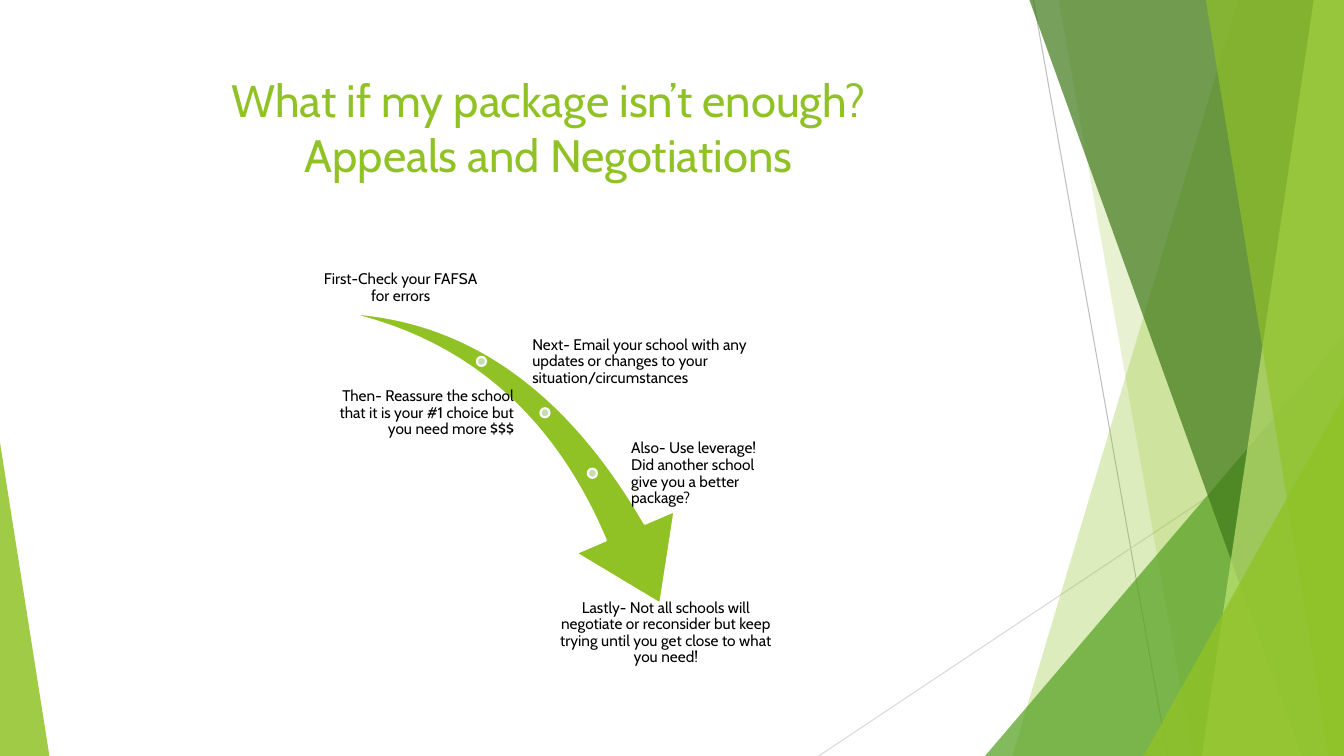
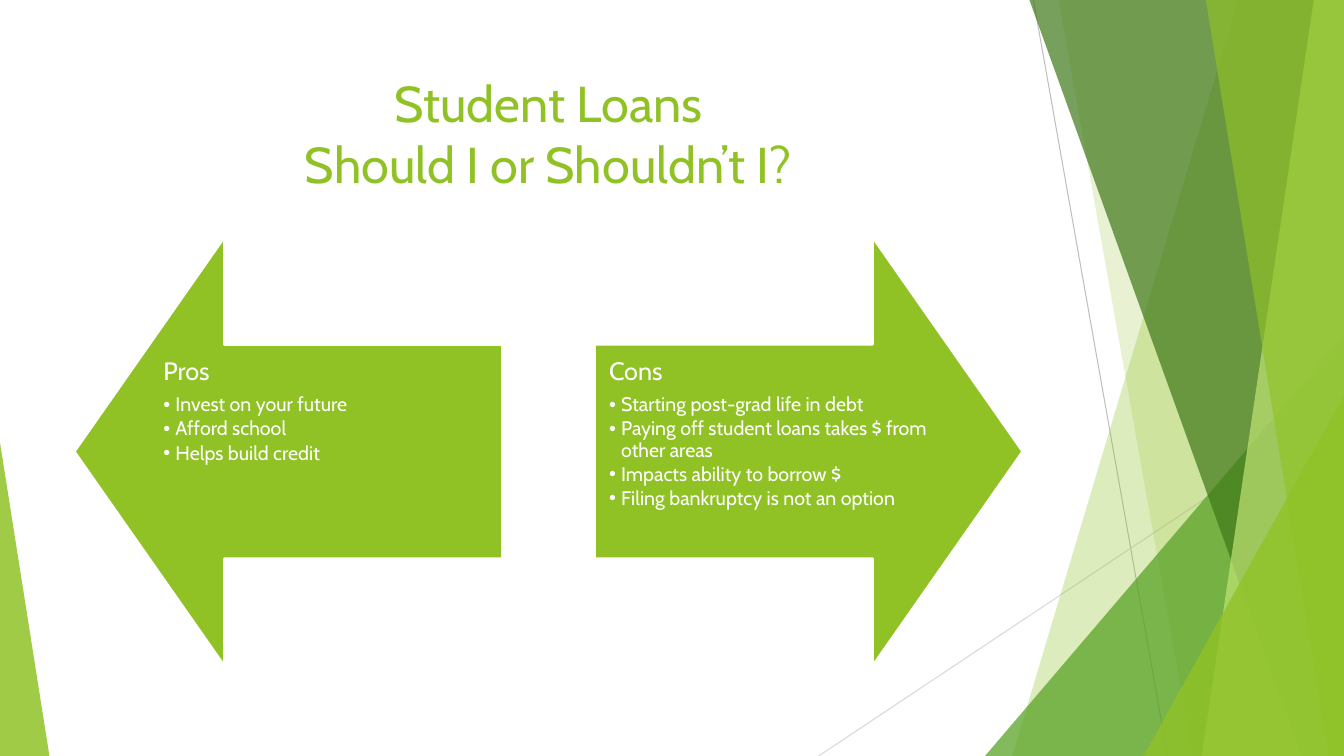
from dataclasses import dataclass

from lxml.etree import SubElement
from pptx import Presentation
from pptx.dml.color import RGBColor
from pptx.enum.shapes import MSO_CONNECTOR, MSO_SHAPE
from pptx.enum.text import MSO_ANCHOR, MSO_AUTO_SIZE, PP_ALIGN
from pptx.oxml.ns import qn
from pptx.util import Inches, Pt


@dataclass(frozen=True)
class Theme:
    font: str = "Cabin"
    lime: str = "90C226"
    leaf: str = "54A021"
    forest: str = "3F7819"
    pale_lime: str = "C0E474"
    dot: str = "C6DDAD"
    gray: str = "BFBFBF"
    light_gray: str = "D9D9D9"
    white: str = "FFFFFF"
    black: str = "000000"
    long_title: float = 32.4
    title: float = 36
    heading: float = 18
    bullet: float = 14
    label: float = 11
    hairline: float = 0.75
    outline: float = 1.5


THEME = Theme()


def paint(shape, color, opacity=100, outlined=False):
    """Fill a shape, with an opacity in percent and an optional white outline."""
    shape.shadow.inherit = False
    shape.fill.solid()
    shape.fill.fore_color.rgb = RGBColor.from_string(color)
    if opacity < 100:
        tint = shape.element.spPr.find(qn("a:solidFill")).find(qn("a:srgbClr"))
        SubElement(tint, qn("a:alpha"), val=str(opacity * 1000))
    if outlined:
        shape.line.color.rgb = RGBColor.from_string(THEME.white)
        shape.line.width = Pt(THEME.outline)
    else:
        shape.line.fill.background()


def add_run(paragraph, text, size, color):
    run = paragraph.add_run()
    run.text = text
    run.font.name = THEME.font
    run.font.size = Pt(size)
    run.font.color.rgb = RGBColor.from_string(color)


WIDTH, HEIGHT = 13.33, 7.5
prs = Presentation()
prs.slide_width, prs.slide_height = Inches(WIDTH), Inches(HEIGHT)

# Shared title place
master = prs.slide_master
master_title = master.placeholders[0]
master_title.left, master_title.top = Inches(0.74), Inches(0.67)
master_title.width, master_title.height = Inches(9.4), Inches(1.44)
master_title.text_frame.vertical_anchor = MSO_ANCHOR.TOP

appeals = prs.slides.add_slide(prs.slide_layouts.get_by_name("Title Only"))
loans = prs.slides.add_slide(prs.slide_layouts.get_by_name("Two Content"))

# Shared backdrop: drawn as one group, then moved to the slide master
backdrop = appeals.shapes.add_group_shape()
for color, x1, y1, x2, y2 in (
    (THEME.gray, 10.25, 0, 11.58, HEIGHT),
    (THEME.light_gray, WIDTH, 4.03, 8.12, HEIGHT),
):
    ray = backdrop.shapes.add_connector(
        MSO_CONNECTOR.STRAIGHT, Inches(x1), Inches(y1), Inches(x2), Inches(y2))
    ray.line.color.rgb = RGBColor.from_string(color)
    ray.line.width = Pt(THEME.hairline)
    SubElement(ray.element.spPr, qn("a:effectLst"))

# A band is (top x, bottom x) and runs to the right edge;
# a wedge is (left, top, width, apex) and stands on the bottom edge.
for color, opacity, outline in (
    (THEME.lime, 30, (12.28, 10.04)),
    (THEME.lime, 20, (10.5, 11.83)),
    (THEME.leaf, 72, (9.77, 3.33, 3.56, 1)),
    (THEME.forest, 70, (10.21, 12.91)),
    (THEME.pale_lime, 70, (13.03, 11.92)),
    (THEME.lime, 65, (11.96, 13.18)),
    (THEME.lime, 80, (11.34, 3.93, 1.99, 1)),
    (THEME.lime, 85, (0, 4.39, 0.49, 0)),
):
    if len(outline) == 2:
        top_x, bottom_x = outline
        builder = backdrop.shapes.build_freeform(Inches(top_x), 0)
        corners = ((WIDTH, 0), (WIDTH, HEIGHT), (bottom_x, HEIGHT))
        builder.add_line_segments([(Inches(x), Inches(y)) for x, y in corners])
        facet = builder.convert_to_shape()
    else:
        left, top, width, apex = outline
        facet = backdrop.shapes.add_shape(
            MSO_SHAPE.ISOSCELES_TRIANGLE,
            Inches(left), Inches(top), Inches(width), Inches(HEIGHT - top))
        facet.adjustments[0] = apex
    paint(facet, color, opacity)

for number, properties in enumerate(backdrop.element.iter(qn("p:cNvPr")), start=100):
    properties.set("id", str(number))
master.shapes.element.insert(2, backdrop.element)

# Titles
for slide, size, lines in (
    (appeals, THEME.long_title,
     ("What if my package isn’t enough?", "Appeals and Negotiations")),
    (loans, THEME.title, ("Student Loans", "Should I or Shouldn’t I?")),
):
    frame = slide.shapes.title.text_frame
    frame.auto_size = MSO_AUTO_SIZE.NONE
    heading = frame.paragraphs[0]
    heading.alignment = PP_ALIGN.CENTER
    add_run(heading, lines[0], size, THEME.lime)
    heading.add_line_break()
    add_run(heading, lines[1], size, THEME.lime)

# Slide 1: steps along a swoosh
swoosh = appeals.shapes.add_shape(
    MSO_SHAPE.SWOOSH_ARROW, Inches(3.35), Inches(3.21), Inches(3.66), Inches(2.56))
swoosh.rotation = 73.3
swoosh.adjustments[0], swoosh.adjustments[1] = 0.163, 0.314
paint(swoosh, THEME.lime, outlined=True)

DOT = Inches(0.09)
for x, y in ((4.73, 3.54), (5.36, 4.05), (5.83, 4.65)):
    dot = appeals.shapes.add_shape(MSO_SHAPE.OVAL, Inches(x), Inches(y), DOT, DOT)
    paint(dot, THEME.dot, outlined=True)

for left, top, width, alignment, anchor, text in (
    (3.11, 2.36, 1.73, PP_ALIGN.CENTER, MSO_ANCHOR.BOTTOM,
     "First-Check your FAFSA for errors"),
    (5.26, 3.25, 2.52, PP_ALIGN.LEFT, MSO_ANCHOR.MIDDLE,
     "Next- Email your school with any updates or changes to your "
     "situation/circumstances"),
    (3.11, 3.76, 2.01, PP_ALIGN.RIGHT, MSO_ANCHOR.MIDDLE,
     "Then- Reassure the school that it is your #1 choice but you need more $$$"),
    (6.24, 4.36, 1.54, PP_ALIGN.LEFT, MSO_ANCHOR.MIDDLE,
     "Also- Use leverage! Did another school give you a better package?"),
    (5.44, 5.93, 2.33, PP_ALIGN.CENTER, MSO_ANCHOR.TOP,
     "Lastly- Not all schools will negotiate or reconsider but keep trying "
     "until you get close to what you need!"),
):
    frame = appeals.shapes.add_textbox(
        Inches(left), Inches(top), Inches(width), Inches(0.68)).text_frame
    frame.word_wrap = True
    frame.vertical_anchor = anchor
    frame.margin_left = frame.margin_right = Inches(0.02)
    frame.margin_top = frame.margin_bottom = Inches(0.02)
    step = frame.paragraphs[0]
    step.alignment = alignment
    step.line_spacing = 0.9
    add_run(step, text, THEME.label, THEME.black)

# Slide 2: opposing arrows with a list on each
ARROW_TOP, ARROW_SIZE, HEAD_INSET = 2.36, 4.24, 0.74
for index, left, rotation, text_left, heading, points in (
    (1, 0.74, 270, 0.74 + HEAD_INSET, "Pros",
     ("Invest on your future", "Afford school", "Helps build credit")),
    (2, 5.9, 90, 5.9, "Cons",
     ("Starting post-grad life in debt",
      "Paying off student loans takes $ from other areas",
      "Impacts ability to borrow $",
      "Filing bankruptcy is not an option")),
):
    arrow = loans.shapes.add_shape(
        MSO_SHAPE.UP_ARROW, Inches(left), Inches(ARROW_TOP),
        Inches(ARROW_SIZE), Inches(ARROW_SIZE))
    arrow.rotation = rotation
    arrow.adjustments[0], arrow.adjustments[1] = 0.5, 0.35
    paint(arrow, THEME.lime, outlined=True)

    body = loans.placeholders[index]
    loans.shapes.element.append(body.element)  # in front of its arrow
    body.left, body.top = Inches(text_left), Inches(ARROW_TOP + ARROW_SIZE / 4)
    body.width, body.height = Inches(ARROW_SIZE - HEAD_INSET), Inches(ARROW_SIZE / 2)
    frame = body.text_frame
    frame.auto_size = MSO_AUTO_SIZE.NONE
    frame.margin_left = frame.margin_right = Inches(0.14)
    frame.margin_top = frame.margin_bottom = Inches(0.14)
    for row, text in enumerate((heading, *points)):
        entry = frame.add_paragraph() if row else frame.paragraphs[0]
        entry.level = 1 if row else 0
        entry.line_spacing = 0.9
        entry.space_before = Pt(0)
        entry.space_after = Pt(2.1 if row else 6.3)
        indent = Inches(0.12) if row else 0
        properties = entry._p.get_or_add_pPr()
        properties.set("marL", str(indent))
        properties.set("indent", str(-indent))
        if row:
            SubElement(properties, qn("a:buChar"), char="•")
        else:
            SubElement(properties, qn("a:buNone"))
        add_run(entry, text, THEME.bullet if row else THEME.heading, THEME.white)

prs.save("out.pptx")
